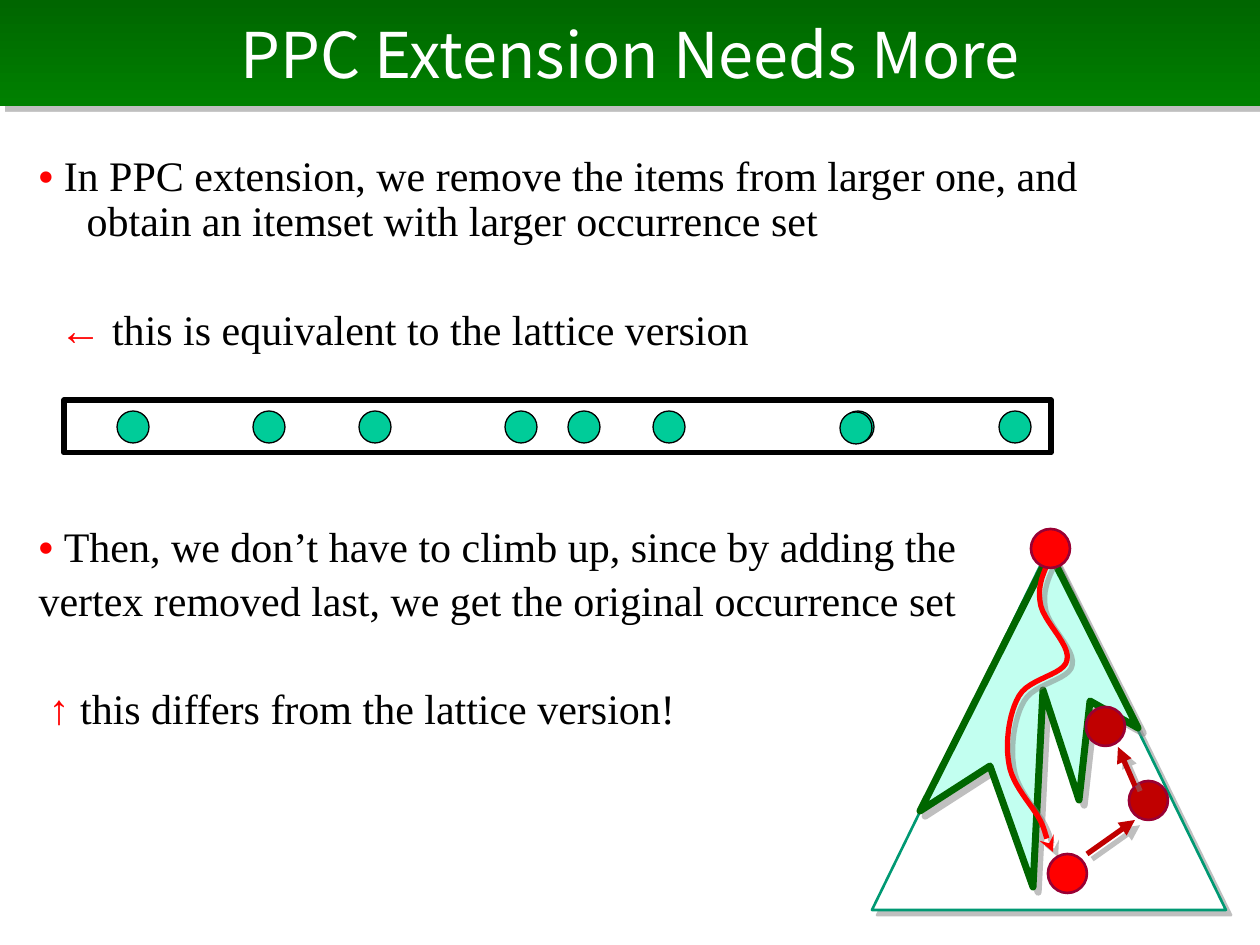
"""Build the slide on PPC extension with its itemset bar and search tree."""
from pptx import Presentation, util as u
from pptx.dml.color import RGBColor
from pptx.enum import shapes as s, text as t
from pptx.oxml import parse_xml
from pptx.oxml.ns import nsdecls, qn

PX = 914400 / 126
THEME = dict(
    head="Noto Sans CJK JP", body="Times New Roman", big=36, size=24,
    white="FFFFFF", black="000000", red="FF0000", dark="C00000", rim="990033",
    top="006600", low="008000", mint="C2FFF0", teal="009973", dot="00CC99",
    shade="808080",
)

TITLE = "PPC Extension Needs More"
LINES = [
    ("• ", "In PPC extension, we remove the items from larger one, and "
           "obtain an itemset with larger occurrence set", 0, 5),
    ("← ", "this is equivalent to the lattice version", 21, 36),
    ("• ", "Then, we don’t have to climb up, since by adding the", 0, 98),
    ("", "vertex removed last, we get the original occurrence set", 0, 5),
    ("↑ ", "this differs from the lattice version!", 10, 36),
]
HANG = 48
BAR = (64, 400, 987, 53)
DOTS = [(x, 411) for x in (117, 253, 359, 505, 568, 653, 842, 999)] + [(840, 412)]
CONE = (872, 548, 354, 362)
TREE = [(1050, 553), (920, 811), (990, 766), (1033, 887), (1043, 690),
        (1079, 800), (1090, 701), (1138, 728)]
START = (1057, 547)
BENDS = [
    ((1047, 564), (1037, 582), (1040, 601)),
    ((1041, 620), (1071, 644), (1067, 660)),
    ((1065, 675), (1029, 678), (1019, 696)),
    ((1009, 713), (1005, 743), (1009, 764)),
    ((1012, 785), (1032, 805), (1040, 820)),
    ((1047, 834), (1043, 832), (1053, 852)),
]
STEPS = 12
NODES = [
    ("ball", (1031, 529), "red"),
    ("ball", (1048, 854), "red"),
    ("move", (1087, 854), (1135, 820)),
    ("ball", (1129, 781), "dark"),
    ("move", (1135, 786), (1118, 747)),
    ("ball", (1086, 707), "dark"),
]


def emu(*vals):
    return [u.Emu(round(v * PX)) for v in vals]


def rgb(name):
    return RGBColor.from_string(THEME[name])


def write(para, words, font="body", size="size", color="black", bold=False):
    run = para.add_run()
    run.text = words
    run.font.name, run.font.size = THEME[font], u.Pt(THEME[size])
    run.font.color.rgb, run.font.bold = rgb(color), bold


def shade(item):
    props = item._element.spPr
    old = props.find(qn("a:effectLst"))
    if old is not None:
        props.remove(old)
    props.append(parse_xml(
        f'<a:effectLst {nsdecls("a")}><a:outerShdw blurRad="0" dist="53340" '
        f'dir="2700000" algn="ctr" rotWithShape="0"><a:srgbClr val="{THEME["shade"]}">'
        '<a:alpha val="50000"/></a:srgbClr></a:outerShdw></a:effectLst>'))


def stroke(item, color, width, tip=None):
    item.line.color.rgb, item.line.width = rgb(color), u.Pt(width)
    if tip:
        item.line._get_or_add_ln().append(
            parse_xml(f'<a:tailEnd {nsdecls("a")} type="{tip}"/>'))


def paint(item, fill, line, width, cast=False, tip=None):
    if fill:
        item.fill.solid()
        item.fill.fore_color.rgb = rgb(fill)
    else:
        item.fill.background()
    stroke(item, line, width, tip)
    item.shadow.inherit = False
    if cast:
        shade(item)


def draw(slide, kind, box, *look, **more):
    paint(slide.shapes.add_shape(kind, *emu(*box)), *look, **more)


def trace(slide, pts, close, *look, **more):
    pts = [emu(*p) for p in pts]
    path = slide.shapes.build_freeform(*pts[0])
    path.add_line_segments(pts[1:], close=close)
    paint(path.convert_to_shape(), *look, **more)


def curve(start, bends):
    pts = [start]
    for b, c, d in bends:
        a = pts[-1]
        for i in range(1, STEPS + 1):
            k = i / STEPS
            m = 1 - k
            pts.append(tuple(
                m**3 * a[n] + 3 * m * m * k * b[n] + 3 * m * k * k * c[n] + k**3 * d[n]
                for n in (0, 1)))
    return pts


def place(item, box):
    item.left, item.top, item.width, item.height = emu(*box)
    item.text_frame.auto_size = t.MSO_AUTO_SIZE.NONE
    item.text_frame.word_wrap = True
    return item.text_frame


def header(slide):
    item = slide.shapes.title
    frame = place(item, (0, 0, 1260, 106))
    frame.vertical_anchor = t.MSO_ANCHOR.MIDDLE
    item.fill.gradient()
    item.fill.gradient_angle = 270
    for stop, name, pos in zip(item.fill.gradient_stops, ("top", "low"), (0, 1)):
        stop.color.rgb, stop.position = rgb(name), pos
    shade(item)
    para = frame.paragraphs[0]
    para.alignment = t.PP_ALIGN.CENTER
    write(para, TITLE, font="head", size="big", color="white")


def body(slide):
    frame = place(slide.placeholders[1], (26, 149, 1091, 620))
    frame.vertical_anchor = t.MSO_ANCHOR.TOP
    for i, (mark, words, inset, gap) in enumerate(LINES):
        para = frame.add_paragraph() if i else frame.paragraphs[0]
        para.line_spacing, para.space_before = 0.9, u.Pt(gap)
        props = para._p.get_or_add_pPr()
        props.set("marL", str(emu(HANG)[0]))
        props.set("indent", str(emu(inset - HANG)[0]))
        props.append(parse_xml(f'<a:buNone {nsdecls("a")}/>'))
        if mark:
            write(para, mark, color="red", bold=True)
        write(para, words)


def tree(slide):
    draw(slide, s.MSO_SHAPE.ISOSCELES_TRIANGLE, CONE, "white", "teal", 1.5, cast=True)
    trace(slide, TREE, True, "mint", "top", 4, cast=True)
    trace(slide, curve(START, BENDS), False, None, "red", 3, cast=True, tip="stealth")
    for kind, at, last in NODES:
        if kind == "ball":
            draw(slide, s.MSO_SHAPE.OVAL, (*at, 39, 39), last, "rim", 1.5)
        else:
            arrow = slide.shapes.add_connector(s.MSO_CONNECTOR.STRAIGHT, *emu(*at, *last))
            stroke(arrow, "dark", 3, "triangle")
            shade(arrow)


def items(slide):
    draw(slide, s.MSO_SHAPE.RECTANGLE, BAR, None, "black", 3)
    for at in DOTS:
        draw(slide, s.MSO_SHAPE.OVAL, (*at, 32, 32), "dot", "black", 0.75)


def main():
    deck = Presentation()
    deck.slide_width, deck.slide_height = emu(1260, 945)
    slide = deck.slides.add_slide(deck.slide_layouts[1])
    for part in (header, body, tree, items):
        part(slide)
    deck.save("out.pptx")


if __name__ == "__main__":
    main()
